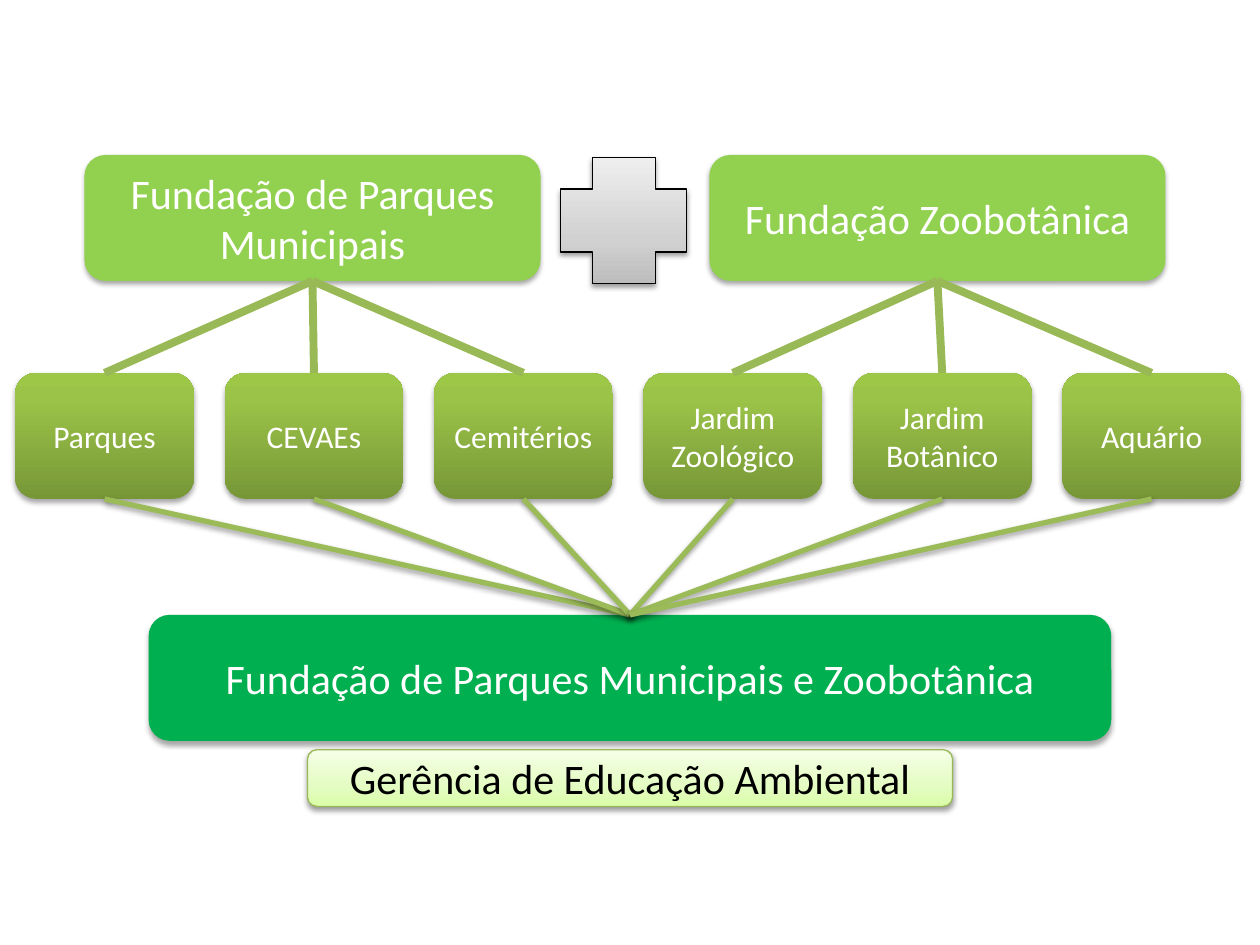
from lxml.etree import SubElement
from pptx import Presentation
from pptx.dml.color import RGBColor
from pptx.enum.shapes import MSO_CONNECTOR, MSO_SHAPE
from pptx.enum.text import MSO_ANCHOR, PP_ALIGN
from pptx.oxml.ns import qn
from pptx.util import Inches, Pt

WHITE = RGBColor(0xFF, 0xFF, 0xFF)
BLACK = RGBColor(0x00, 0x00, 0x00)
LIME = RGBColor(0x92, 0xD0, 0x50)
GREEN = RGBColor(0x00, 0xB0, 0x50)
MOSS = RGBColor(0x98, 0xB9, 0x55)
OLIVE = RGBColor(0x9B, 0xBB, 0x59)

# Gradients run from bottom to top: (position in percent, colour)
LEAF = [(0, RGBColor(0x77, 0x97, 0x37)), (80, RGBColor(0x9B, 0xC3, 0x48)),
        (100, RGBColor(0x9D, 0xC7, 0x46))]
GREY = [(0, RGBColor(0xBD, 0xBD, 0xBD)), (35, RGBColor(0xD1, 0xD1, 0xD1)),
        (100, RGBColor(0xEE, 0xEE, 0xEE))]
PALE = [(0, RGBColor(0xDA, 0xFD, 0xA7)), (35, RGBColor(0xE4, 0xFC, 0xC2)),
        (100, RGBColor(0xF5, 0xFF, 0xE7))]

SOFT = (35, 1.8)  # shadow opacity in percent, distance in points
FIRM = (38, 1.6)
TOP, BOTTOM = 0, 2  # connection sites
UNITS = ["Parques", "CEVAEs", "Cemitérios",
         "Jardim Zoológico", "Jardim Botânico", "Aquário"]


class Chart:
    """Draws on a grid of 100 columns by 75 rows."""
    font = "Calibri"
    cell = Inches(0.1)

    def __init__(self, slide):
        self.slide = slide

    def shape(self, kind, col, row, wide, high, fill, edge=None, shade=SOFT):
        item = self.slide.shapes.add_shape(
            kind, *(round(n * self.cell) for n in (col, row, wide, high)))
        if isinstance(fill, list):
            self.blend(item, fill)
        else:
            item.fill.solid()
            item.fill.fore_color.rgb = fill
        if edge is None:
            item.line.fill.background()
        else:
            item.line.color.rgb = edge
            item.line.width = Pt(0.75)
        item.shadow.inherit = False
        self.shade(item.element.spPr.find(qn("a:effectLst")), shade)
        return item

    def box(self, text, col, row, wide, high, fill, size=24, ink=WHITE, **look):
        item = self.shape(MSO_SHAPE.ROUNDED_RECTANGLE, col, row, wide, high,
                          fill, **look)
        frame = item.text_frame
        frame.text = text
        frame.vertical_anchor = MSO_ANCHOR.MIDDLE
        para = frame.paragraphs[0]
        para.alignment = PP_ALIGN.CENTER
        font = para.runs[0].font
        font.name, font.size, font.color.rgb = self.font, Pt(size), ink
        return item

    def link(self, above, below, color, width, shade=None):
        """Join the bottom of one box to the top of another."""
        line = self.slide.shapes.add_connector(MSO_CONNECTOR.STRAIGHT, 0, 0, 0, 0)
        line.begin_connect(above, BOTTOM)
        line.end_connect(below, TOP)
        line.line.color.rgb = color
        line.line.width = Pt(width)
        effects = SubElement(line.element.spPr, qn("a:effectLst"))
        if shade:
            self.shade(effects, shade)

    def blend(self, item, stops):
        item.fill.gradient()
        item.fill.gradient_angle = 90
        group = item.element.spPr.find(".//" + qn("a:gsLst"))
        group.clear()
        for place, color in stops:
            stop = SubElement(group, qn("a:gs"), pos=str(place * 1000))
            SubElement(stop, qn("a:srgbClr"), val=str(color))

    def shade(self, effects, style):
        alpha, gap = style
        shadow = SubElement(effects, qn("a:outerShdw"), blurRad=str(Pt(3.1)),
                            dist=str(Pt(gap)), dir="5400000", rotWithShape="0")
        tint = SubElement(shadow, qn("a:srgbClr"), val=str(BLACK))
        SubElement(tint, qn("a:alpha"), val=str(alpha * 1000))


def main():
    deck = Presentation()
    deck.slide_width, deck.slide_height = Inches(10), Inches(7.5)
    chart = Chart(deck.slides.add_slide(deck.slide_layouts[6]))

    units = [chart.box(name, 1.2 + 16.62 * i, 29.6, 14.2, 10, LEAF, size=18)
             for i, name in enumerate(UNITS)]
    parks = chart.box("Fundação de Parques Municipais", 6.7, 12.3, 36.2, 10, LIME)
    zoo = chart.box("Fundação Zoobotânica", 56.3, 12.3, 36.2, 10, LIME)
    chart.shape(MSO_SHAPE.CROSS, 44.5, 12.5, 10, 10, GREY, edge=BLACK, shade=FIRM)
    for owner, group in ((parks, units[:3]), (zoo, units[3:])):
        for unit in group:
            chart.link(owner, unit, MOSS, 4.5)

    merged = chart.box("Fundação de Parques Municipais e Zoobotânica",
                       11.8, 48.8, 76.4, 10, GREEN)
    for unit in units:
        chart.link(unit, merged, OLIVE, 3, FIRM)
    chart.box("Gerência de Educação Ambiental", 24.4, 59.5, 51.2, 4.5, PALE,
              ink=BLACK, edge=MOSS, shade=FIRM)
    deck.save("out.pptx")


if __name__ == "__main__":
    main()
